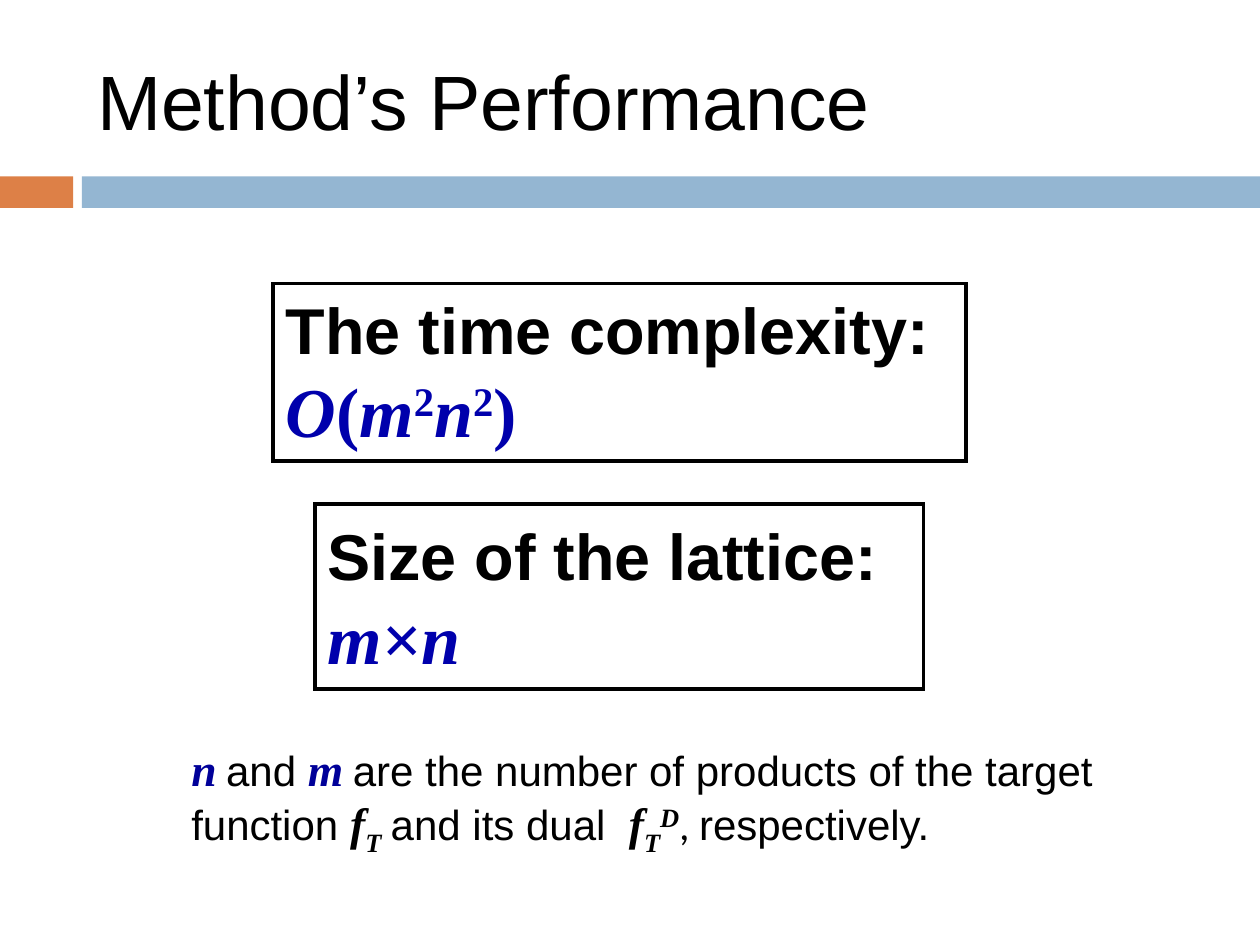
from lxml import etree
from pptx import Presentation
from pptx.dml.color import RGBColor
from pptx.enum.shapes import MSO_SHAPE
from pptx.enum.text import MSO_ANCHOR, PP_ALIGN
from pptx.oxml.ns import qn
from pptx.util import Inches, Pt

RECT = MSO_SHAPE.RECTANGLE
TOP, MIDDLE = MSO_ANCHOR.TOP, MSO_ANCHOR.MIDDLE
LEFT = PP_ALIGN.LEFT

BLACK = RGBColor(0x00, 0x00, 0x00)
ORANGE = RGBColor(0xDD, 0x80, 0x47)
BLUE = RGBColor(0x94, 0xB6, 0xD2)
FORMULA = RGBColor(0x00, 0x00, 0xAC)
SYMBOL = RGBColor(0x00, 0x00, 0x99)

SANS, BODY, SERIF = "Arial", "Calibri", "Times New Roman"

# Run styles: font, size, colour, bold, italic, baseline shift in %
HEAD = (SANS, 37, BLACK, True, False, 0)
GAP = (SANS, 40, BLACK, True, False, 0)
VAR = (SERIF, 40, FORMULA, True, True, 0)
SIGN = (SERIF, 40, FORMULA, True, False, 0)
POWER = (SERIF, 40, FORMULA, True, False, 30)
TEXT = (SANS, 24, BLACK, False, False, 0)
SPACE = (BODY, 24, BLACK, False, False, 0)
COUNT = (SERIF, 26, SYMBOL, True, True, 0)
FUNC = (SERIF, 26, BLACK, True, True, 0)
SUB = (SERIF, 26, BLACK, True, True, -25)
SUP = (SERIF, 26, BLACK, True, True, 30)


def add_rect(slide, box, fill=None):
    sp = slide.shapes.add_shape(RECT, *map(Inches, box))
    sp.shadow.inherit = False
    if fill is None:
        sp.fill.background()
        sp.line.color.rgb = BLACK
        sp.line.width = Pt(2.25)
        # Square corners on the frame
        ln = sp.element.spPr.find(qn("a:ln"))
        etree.SubElement(ln, qn("a:miter")).set("lim", "800000")
    else:
        sp.fill.solid()
        sp.fill.fore_color.rgb = fill
        sp.line.fill.background()
    return sp


def write(tf, paragraphs):
    tf.word_wrap = True
    tf.vertical_anchor = TOP
    for i, runs in enumerate(paragraphs):
        p = tf.add_paragraph() if i else tf.paragraphs[0]
        p.alignment = LEFT
        for text, (name, size, color, bold, italic, shift) in runs:
            r = p.add_run()
            r.text = text
            r.font.name, r.font.size = name, Pt(size)
            r.font.bold, r.font.italic = bold, italic
            r.font.color.rgb = color
            if shift:
                r.font._element.set("baseline", str(shift * 1000))


prs = Presentation()
prs.slide_width, prs.slide_height = Inches(10), Inches(7.5)
slide = prs.slides.add_slide(prs.slide_layouts[5])

# Title
title = slide.shapes.title
title.left, title.top, title.width, title.height = map(Inches, (0.67, 0.25, 8.92, 1.08))
tf = title.text_frame
tf.text = "Method’s Performance"
tf.vertical_anchor = MIDDLE
p = tf.paragraphs[0]
p.alignment = LEFT
p.font.name, p.font.size = SANS, Pt(44)
p.font.color.rgb = BLACK

# Two-colour band under the title
for left, width, color in ((0, 0.58, ORANGE), (0.65, 9.35, BLUE)):
    add_rect(slide, (left, 1.4, width, 0.25), color)

# Framed results
results = [
    ((2.5, 4, 4.83, 1.47),
     [[("Size of the lattice:", HEAD), (" ", GAP), ("m×n", VAR)]]),
    ((2.17, 2.25, 5.5, 1.41),
     [[("The time complexity:", HEAD)],
      [("O", VAR), ("(", SIGN), ("m", VAR), ("2", POWER),
       ("n", VAR), ("2", POWER), (")", SIGN)]]),
]
for box, paragraphs in results:
    write(add_rect(slide, box).text_frame, paragraphs)

# Explanation of the symbols
tf = slide.shapes.add_textbox(*map(Inches, (1.42, 5.83, 7.5, 1.08))).text_frame
write(tf, [[
    ("n", COUNT), (" ", SPACE), ("and ", TEXT), ("m", COUNT), (" ", SPACE),
    ("are the number of products of the target function ", TEXT),
    ("f", FUNC), ("T", SUB), (" ", SPACE), ("and its dual  ", TEXT),
    ("f", FUNC), ("T", SUB), ("D", SUP), (", ", SPACE), ("respectively.", TEXT),
]])
tf.paragraphs[0].space_before = Pt(5)

prs.save("out.pptx")
